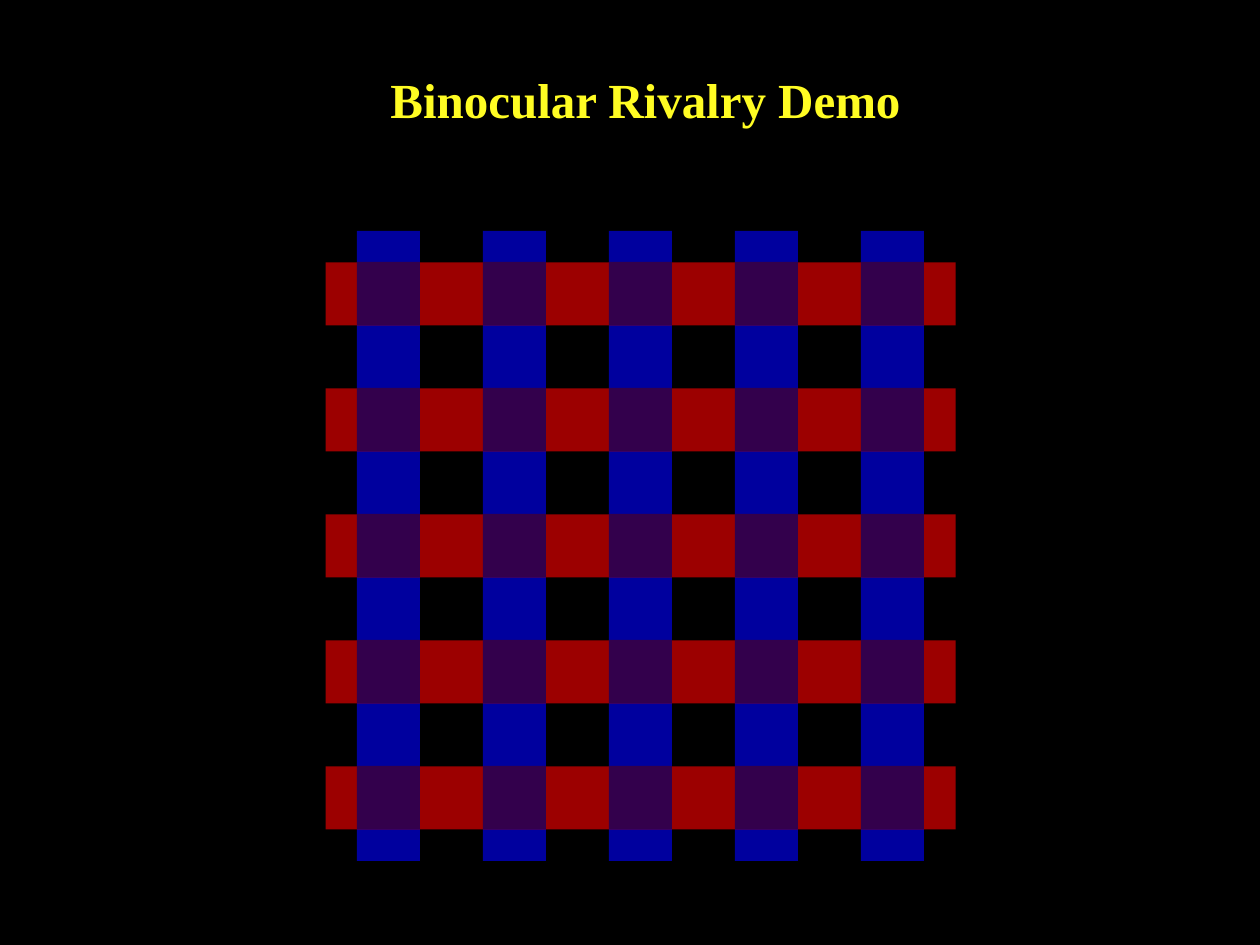
from pptx import Presentation
from pptx.dml.color import RGBColor
from pptx.enum.shapes import MSO_SHAPE
from pptx.enum.text import MSO_AUTO_SIZE, PP_ALIGN
from pptx.util import Pt

SCALE = 914400 / 126
HUES = {
    "black": "000000",
    "blue": "00009E",
    "red": "9C0000",
    "cross": "33004C",
    "title": "FFFC23",
}
FONT = "Times New Roman"
COUNT, STEP, BAR, SPAN = 5, 126, 63, 630
LEFT, TOP = 357, 231


def emu(px):
    return round(px * SCALE)


def hue(name):
    return RGBColor.from_string(HUES[name])


class Page:
    def __init__(self, deck):
        self.slide = deck.slides.add_slide(deck.slide_layouts[6])
        self.shapes = self.slide.shapes
        fill = self.slide.background.fill
        fill.solid()
        fill.fore_color.rgb = hue("black")

    def title(self, text, x, y, w, h):
        box = self.shapes.add_textbox(*map(emu, (x, y, w, h)))
        frame = box.text_frame
        frame.word_wrap = False
        frame.auto_size = MSO_AUTO_SIZE.SHAPE_TO_FIT_TEXT
        par = frame.paragraphs[0]
        par.text = text
        par.alignment = PP_ALIGN.CENTER
        par.font.name = FONT
        par.font.size = Pt(28)
        par.font.bold = True
        par.font.color.rgb = hue("title")

    def rect(self, color, x, y, w, h, turn=0, group=None):
        shapes = group.shapes if group else self.shapes
        rect = shapes.add_shape(MSO_SHAPE.RECTANGLE, *map(emu, (x, y, w, h)))
        rect.shadow.inherit = False
        rect.fill.solid()
        rect.fill.fore_color.rgb = hue(color)
        rect.line.fill.background()
        rect.rotation = turn

    def row(self, color, xs, y, size):
        group = self.shapes.add_group_shape()
        for x in xs:
            self.rect(color, x, y, size, size, group=group)


def main():
    deck = Presentation()
    deck.slide_width, deck.slide_height = emu(1260), emu(945)
    page = Page(deck)
    steps = [i * STEP for i in range(COUNT)]
    cols = [LEFT + step for step in steps]
    rows = [TOP + BAR // 2 + step for step in steps]
    mid = cols[COUNT // 2]
    rise = (SPAN - BAR) // 2

    for x in cols:
        page.rect("blue", x, TOP, BAR, SPAN)
    page.title("Binocular Rivalry Demo", 377, 63, 537, 72)
    for y in rows:
        page.rect("red", mid, y - rise, BAR, SPAN, turn=90)
    for y in rows:
        page.row("cross", cols, y, BAR)

    deck.save("out.pptx")


if __name__ == "__main__":
    main()
